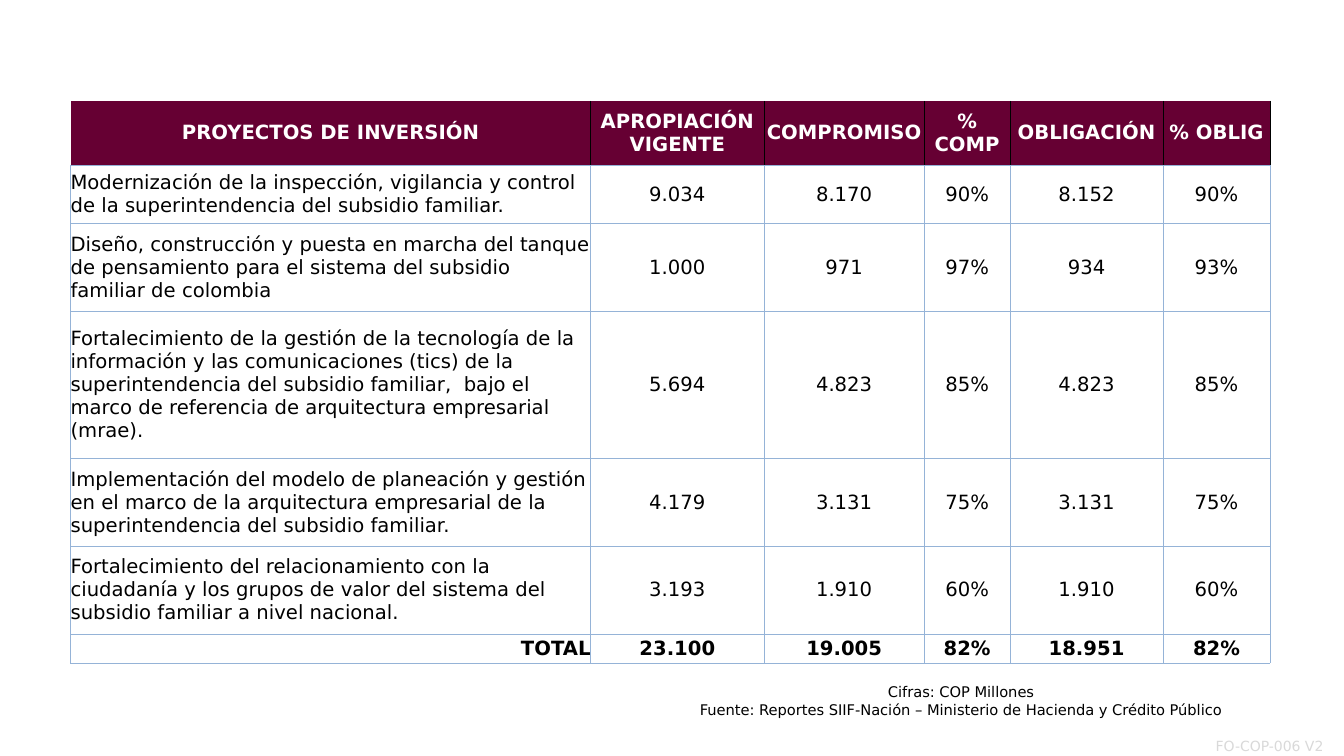
from dataclasses import dataclass

from lxml import etree
from pptx import Presentation
from pptx.dml.color import RGBColor
from pptx.enum.text import MSO_ANCHOR, PP_ALIGN
from pptx.oxml.ns import qn
from pptx.slide import Slide
from pptx.table import Table, _Cell
from pptx.text.text import TextFrame
from pptx.util import Inches, Pt

LEFT, CENTER, RIGHT = PP_ALIGN.LEFT, PP_ALIGN.CENTER, PP_ALIGN.RIGHT
MIDDLE, BOTTOM = MSO_ANCHOR.MIDDLE, MSO_ANCHOR.BOTTOM

BLACK = RGBColor(0x00, 0x00, 0x00)
WHITE = RGBColor(0xFF, 0xFF, 0xFF)
MAROON = RGBColor(0x66, 0x00, 0x33)
LIGHT_BLUE = RGBColor(0x95, 0xB3, 0xD7)
PALE_GRAY = RGBColor(0xD9, 0xD9, 0xD9)

FONT = "DejaVu Sans"
GRID_STEP = Inches(0.1)
SLIDE_COLUMNS, SLIDE_ROWS = 133.33, 75
BORDER_WIDTH = Pt(0.5)
NO_STYLE = "{2D5ABB26-0587-4C30-8999-92F81FD0307C}"


@dataclass(frozen=True)
class Project:
    name: str
    figures: tuple[str, ...]
    height: float


HEADINGS = ("PROYECTOS DE INVERSIÓN", "APROPIACIÓN VIGENTE", "COMPROMISO",
            "% COMP", "OBLIGACIÓN", "% OBLIG")
COLUMN_WIDTHS = (51.6, 17.2, 15.9, 8.5, 15.2, 10.6)
HEADING_HEIGHT = 6.4
PROJECTS = (
    Project("Modernización de la inspección, vigilancia y control de la "
            "superintendencia del subsidio familiar.",
            ("9.034", "8.170", "90%", "8.152", "90%"), 5.8),
    Project("Diseño, construcción y puesta en marcha del tanque de pensamiento "
            "para el sistema del subsidio familiar de colombia",
            ("1.000", "971", "97%", "934", "93%"), 8.7),
    Project("Fortalecimiento de la gestión de la tecnología de la información y "
            "las comunicaciones (tics) de la superintendencia del subsidio "
            "familiar,  bajo el marco de referencia de arquitectura empresarial "
            "(mrae).",
            ("5.694", "4.823", "85%", "4.823", "85%"), 14.6),
    Project("Implementación del modelo de planeación y gestión en el marco de la "
            "arquitectura empresarial de la superintendencia del subsidio "
            "familiar.",
            ("4.179", "3.131", "75%", "3.131", "75%"), 8.7),
    Project("Fortalecimiento del relacionamiento con la ciudadanía y los grupos "
            "de valor del sistema del subsidio familiar a nivel nacional.",
            ("3.193", "1.910", "60%", "1.910", "60%"), 8.7),
)
TOTAL = Project("TOTAL", ("23.100", "19.005", "82%", "18.951", "82%"), 2.9)


def grid(steps: float) -> int:
    return round(steps * GRID_STEP)


def write_text(frame: TextFrame, *lines: str, size: float = 14,
               color: RGBColor = BLACK, bold: bool = False,
               alignment: PP_ALIGN = LEFT) -> None:
    frame.word_wrap = True
    for index, line in enumerate(lines):
        paragraph = frame.add_paragraph() if index else frame.paragraphs[0]
        paragraph.alignment = alignment
        run = paragraph.add_run()
        run.text = line
        run.font.name = FONT
        run.font.size = Pt(size)
        run.font.bold = bold
        run.font.color.rgb = color


def add_plain_table(slide: Slide, left: float, top: float,
                    widths: tuple[float, ...], heights: tuple[float, ...]) -> Table:
    """Add a table without style, measured in grid steps."""
    table = slide.shapes.add_table(
        len(heights), len(widths), grid(left), grid(top),
        grid(sum(widths)), grid(sum(heights))).table
    table.first_row = table.horz_banding = False
    table._tbl.tblPr.find(qn("a:tableStyleId")).text = NO_STYLE
    for column, width in zip(table.columns, widths):
        column.width = grid(width)
    for row, height in zip(table.rows, heights):
        row.height = grid(height)
    return table


def set_margins(cell: _Cell, margin: int) -> None:
    cell.margin_left = cell.margin_right = margin
    cell.margin_top = cell.margin_bottom = margin


def add_borders(cell: _Cell, borders: dict[str, RGBColor]) -> None:
    """Draw the given sides (in the order L, R, T, B) before the cell is filled."""
    properties = cell._tc.get_or_add_tcPr()
    for side, color in borders.items():
        line = etree.SubElement(properties, qn(f"a:ln{side}"), w=str(BORDER_WIDTH))
        fill = etree.SubElement(line, qn("a:solidFill"))
        etree.SubElement(fill, qn("a:srgbClr"), val=str(color))


def add_investment_table(slide: Slide) -> None:
    entries = (*PROJECTS, TOTAL)
    heights = (HEADING_HEIGHT, *(entry.height for entry in entries))
    table = add_plain_table(slide, 7, 10, COLUMN_WIDTHS, heights)
    contents = (HEADINGS, *((entry.name, *entry.figures) for entry in entries))
    for row, texts in enumerate(contents):
        is_heading, is_total = row == 0, row == len(entries)
        for column, text in enumerate(texts):
            cell = table.cell(row, column)
            set_margins(cell, 0)
            cell.vertical_anchor = MIDDLE
            if is_heading:
                sides = {"L": BLACK} if column else {}
                add_borders(cell, {**sides, "R": BLACK, "B": LIGHT_BLUE})
                cell.fill.solid()
                cell.fill.fore_color.rgb = MAROON
            else:
                add_borders(cell, dict.fromkeys("LRTB", LIGHT_BLUE))
                cell.fill.background()
            if column or is_heading:
                alignment = CENTER
            else:
                alignment = RIGHT if is_total else LEFT
            write_text(cell.text_frame, text, bold=is_heading or is_total,
                       color=WHITE if is_heading else BLACK, alignment=alignment)


def add_source_note(slide: Slide) -> None:
    box = slide.shapes.add_textbox(grid(60), grid(67.3), grid(70.7), grid(4.7))
    write_text(box.text_frame, "Cifras: COP Millones",
               "Fuente: Reportes SIIF-Nación – Ministerio de Hacienda y Crédito Público",
               size=10.5, alignment=CENTER)


def add_form_code(slide: Slide) -> None:
    cell = add_plain_table(slide, 120.5, 72, (12.8,), (3,)).cell(0, 0)
    set_margins(cell, Inches(0.01))
    cell.vertical_anchor = BOTTOM
    cell.fill.solid()
    cell.fill.fore_color.rgb = WHITE
    write_text(cell.text_frame, "FO-COP-006 V2", size=10, color=PALE_GRAY)


def main() -> None:
    presentation = Presentation()
    presentation.slide_width = grid(SLIDE_COLUMNS)
    presentation.slide_height = grid(SLIDE_ROWS)
    slide = presentation.slides.add_slide(presentation.slide_layouts[6])
    add_form_code(slide)
    add_source_note(slide)
    add_investment_table(slide)
    presentation.save("out.pptx")


if __name__ == "__main__":
    main()
